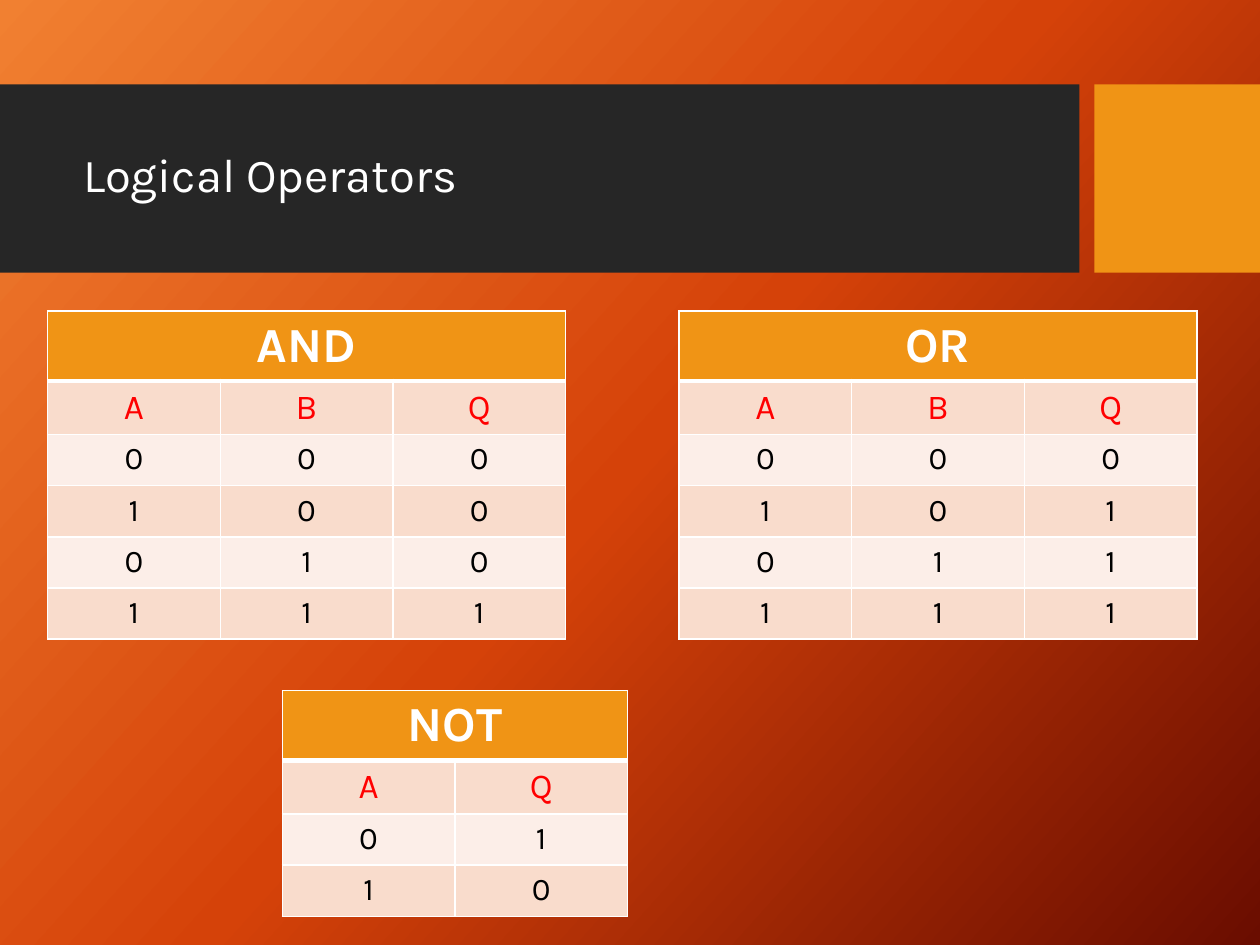
"""Build the slide of truth tables for the logical operators."""
from copy import deepcopy

from lxml import etree
from pptx import Presentation
from pptx import util as u
from pptx.dml.color import RGBColor
from pptx.enum import shapes, text
from pptx.oxml.ns import qn

FONT = "Karla"
COLORS = {
    "glow": "F18031", "flame": "D54209", "ember": "6A0D00",
    "band": "262626", "accent": "F09415", "white": "FFFFFF",
    "red": "FF0000", "black": "000000", "odd": "F9DCCC", "even": "FCEEE8",
}
COL_W, ROW_H, HEAD_H = 3.48, 1.03, 1.5
TRUTH_TABLES = [
    ("AND", (0.96, 6.27), ["ABQ", "000", "100", "010", "111"]),
    ("OR", (13.69, 6.27), ["ABQ", "000", "101", "011", "111"]),
    ("NOT", (5.69, 13.92), ["AQ", "01", "10"]),
]


def rgb(name):
    """Return the named colour."""
    return RGBColor.from_string(COLORS[name])


def style_paragraph(p, size, color, align, bold=False):
    """Align a paragraph and format its runs."""
    p.alignment = align
    for r in p.runs:
        r.font.name, r.font.size, r.font.bold = FONT, u.Pt(size), bold
        r.font.color.rgb = rgb(color)


def paint_background(s):
    """Fill the slide with a three-stop diagonal gradient."""
    fill = s.background.fill
    fill.gradient()
    fill.gradient_angle = 318
    first = s.element.find(".//" + qn("a:gs"))
    first.addnext(deepcopy(first))
    stops = zip(fill.gradient_stops, ("glow", "flame", "ember"), (0, 0.5, 1))
    for stop, color, position in stops:
        stop.color.rgb, stop.position = rgb(color), position


def add_block(s, left, top, width, height, color):
    """Add a plain filled rectangle."""
    box = [u.Cm(v) for v in (left, top, width, height)]
    sp = s.shapes.add_shape(shapes.MSO_SHAPE.RECTANGLE, *box)
    sp.shadow.inherit = False
    sp.fill.solid()
    sp.fill.fore_color.rgb = rgb(color)
    sp.line.fill.background()


def add_header(s, title, left, top, width, height):
    """Lay out the title band and its accent block across the given box."""
    accent_w, gap = 3.34, 0.3
    band_w = width - accent_w - gap
    add_block(s, left, top, band_w, height, "band")
    add_block(s, left + width - accent_w, top, accent_w, height, "accent")
    sp = s.shapes.title
    sp.element.getparent().append(sp.element)
    sp.left, sp.top = u.Cm(left + 1.42), u.Cm(top + 0.38)
    sp.width, sp.height = u.Cm(band_w - 1.7), u.Cm(3)
    tf = sp.text_frame
    tf.text = title
    tf.auto_size = text.MSO_AUTO_SIZE.NONE
    tf.vertical_anchor = text.MSO_ANCHOR.MIDDLE
    p = tf.paragraphs[0]
    p.line_spacing = 0.9
    style_paragraph(p, 27, "white", text.PP_ALIGN.LEFT)


def set_borders(cell, top=1, bottom=1):
    """Give a cell white borders with the widths in points."""
    tc_pr = cell._tc.get_or_add_tcPr()
    for side, width in (("L", 1), ("R", 1), ("T", top), ("B", bottom)):
        ln = etree.SubElement(tc_pr, qn(f"a:ln{side}"), w=str(u.Pt(width)))
        fill = etree.SubElement(ln, qn("a:solidFill"))
        etree.SubElement(fill, qn("a:srgbClr"), val=COLORS["white"])


def style_cell(cell, row):
    """Format a cell according to its row in the truth table."""
    size, color = {0: (28, "white"), 1: (20, "red")}.get(row, (18, "black"))
    set_borders(cell, 3 if row == 1 else 1, 3 if row == 0 else 1)
    cell.fill.solid()
    shade = "accent" if row == 0 else "odd" if row % 2 else "even"
    cell.fill.fore_color.rgb = rgb(shade)
    p = cell.text_frame.paragraphs[0]
    style_paragraph(p, size, color, text.PP_ALIGN.CENTER, row == 0)


def add_truth_table(s, name, left, top, rows):
    """Add one truth table with a merged heading at the given corner."""
    cols, n_rows = len(rows[0]), len(rows) + 1
    height = HEAD_H + ROW_H * len(rows)
    frame = s.shapes.add_table(n_rows, cols, u.Cm(left), u.Cm(top),
                               u.Cm(COL_W * cols), u.Cm(height))
    table = frame.table
    table.cell(0, 0).merge(table.cell(0, cols - 1))
    for i, values in enumerate([[name] + [""] * (cols - 1), *rows]):
        table.rows[i].height = u.Cm(ROW_H)
        for j, value in enumerate(values):
            cell = table.cell(i, j)
            cell.text = value
            style_cell(cell, i)
    frame.height = u.Cm(height)


def main():
    """Assemble and save the slide."""
    prs = Presentation()
    prs.slide_width, prs.slide_height = u.Cm(25.4), u.Cm(19.05)
    s = prs.slides.add_slide(prs.slide_layouts[5])
    paint_background(s)
    add_header(s, "Logical Operators", 0, 1.7, 25.4, 3.8)
    for name, (left, top), rows in TRUTH_TABLES:
        add_truth_table(s, name, left, top, rows)
    prs.save("out.pptx")


if __name__ == "__main__":
    main()
